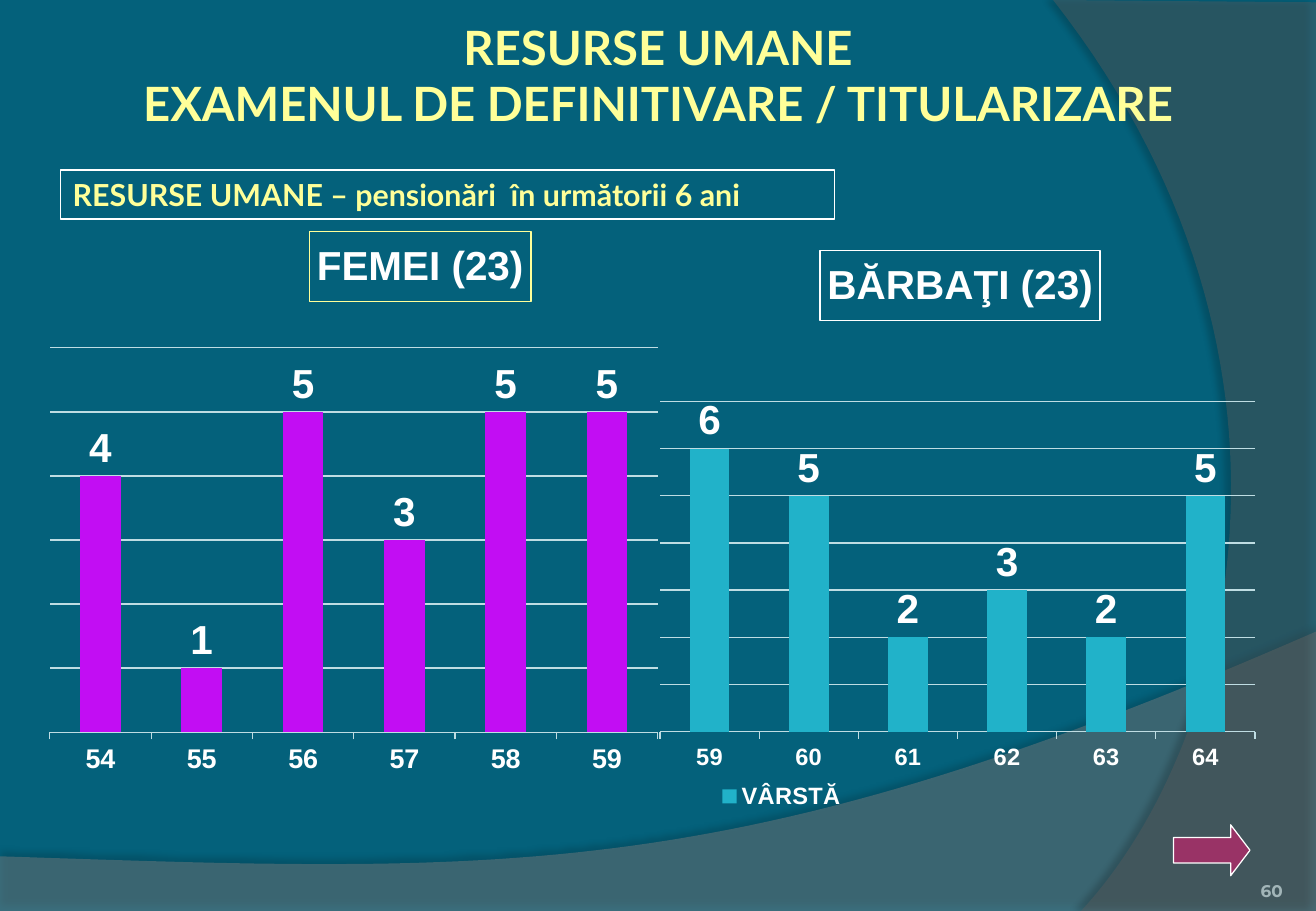
from lxml import etree
from pptx import Presentation
from pptx.chart.data import CategoryChartData
from pptx.dml.color import RGBColor
from pptx.enum.chart import XL_CHART_TYPE, XL_LABEL_POSITION, XL_LEGEND_POSITION, XL_TICK_LABEL_POSITION, XL_TICK_MARK
from pptx.enum.shapes import MSO_SHAPE
from pptx.enum.text import MSO_ANCHOR, MSO_AUTO_SIZE, PP_ALIGN
from pptx.oxml.ns import qn
from pptx.util import Pt

COLUMNS = XL_CHART_TYPE.COLUMN_CLUSTERED
ABOVE = XL_LABEL_POSITION.OUTSIDE_END
LEGEND_RIGHT = XL_LEGEND_POSITION.RIGHT
LOW, OUTSIDE, NO_TICK = XL_TICK_LABEL_POSITION.LOW, XL_TICK_MARK.OUTSIDE, XL_TICK_MARK.NONE
RECT, ARROW = MSO_SHAPE.RECTANGLE, MSO_SHAPE.RIGHT_ARROW
TOP, MIDDLE, BOTTOM = MSO_ANCHOR.TOP, MSO_ANCHOR.MIDDLE, MSO_ANCHOR.BOTTOM
LEFT, CENTER, RIGHT = PP_ALIGN.LEFT, PP_ALIGN.CENTER, PP_ALIGN.RIGHT

TEAL = RGBColor(0x04, 0x61, 0x7B)
GREY = RGBColor(0x7F, 0x7F, 0x7F)
DARK = RGBColor(0x5E, 0x5E, 0x5E)
YELLOW = RGBColor(0xFF, 0xFF, 0x99)
WHITE = RGBColor(0xFF, 0xFF, 0xFF)
PALE = RGBColor(0xA2, 0xB5, 0xB8)
PLUM = RGBColor(0x99, 0x33, 0x66)
PURPLE = RGBColor(0xC2, 0x0D, 0xF3)
CYAN = RGBColor(0x21, 0xB2, 0xC9)
GRID = RGBColor(0xBF, 0xDD, 0xE3)

TITLE = "RESURSE UMANE\vEXAMENUL DE DEFINITIVARE / TITULARIZARE"
SUBTITLE = "RESURSE UMANE – pensionări  în următorii 6 ani"
PAGE = "60"

WAVES = [
    dict(corners=[(0, 507.6), (0, 540), (780, 540)],
         curve=[(780, 374.4), (436.3, 524.9), (304.6, 517.7), (0, 507.6)],
         color=GREY, alpha=45, shadow=(35, 4, 3.5, 270)),
    dict(corners=[(780, 1.4), (780, 540)],
         curve=[(640.8, 540), (728.6, 445.7), (793.4, 216), (624.2, 0)],
         color=DARK, alpha=40, shadow=(45, 4, 4, 180)),
]
CHARTS = [
    dict(box=(18, 116, 372.2, 382.3), title="FEMEI (23)", border=YELLOW, title_at=(0.445, 0.055),
         series="FEMEI (23)", ages=range(54, 60), values=(4, 1, 5, 3, 5, 5), top=6,
         color=PURPLE, tick_size=16, plot=(0.031, 0.236, 0.969, 0.596), legend=None),
    dict(box=(379.4, 138.2, 380.9, 347.8), title="BĂRBAŢI (23)", border=WHITE, title_at=(0.28, 0.03),
         series="VÂRSTĂ", ages=range(59, 65), values=(6, 5, 2, 3, 2, 5), top=7,
         color=CYAN, tick_size=14, plot=(0.031, 0.287, 0.926, 0.563), legend=(0.11, 0.93, 0.22, 0.06)),
]


def apply(obj, values):
    for name, value in values.items():
        setattr(obj, name, value)


def style(font, size, color=WHITE, name="Arial", bold=True):
    apply(font, dict(size=Pt(size), name=name, bold=bold))
    font.color.rgb = color


def write(sp, text, size, name, color, align, anchor, inset):
    tf = sp.text_frame
    apply(tf, dict(word_wrap=True, auto_size=MSO_AUTO_SIZE.NONE, vertical_anchor=anchor,
                   margin_left=Pt(inset), margin_right=Pt(inset),
                   margin_top=Pt(inset / 2), margin_bottom=Pt(inset / 2)))
    p = tf.paragraphs[0]
    p.text = text
    p.alignment = align
    for r in p.runs:
        style(r.font, size, color, name)


def place(sp, left, top, width, height):
    apply(sp, dict(left=Pt(left), top=Pt(top), width=Pt(width), height=Pt(height)))


def bezier(a, b, c, d, steps=60):
    for i in range(steps + 1):
        t = i / steps
        u = 1 - t
        yield tuple(u**3 * k + 3 * u * u * t * m + 3 * u * t * t * n + t**3 * q
                    for k, m, n, q in zip(a, b, c, d))


def set_alpha(color, percent):
    etree.SubElement(color, qn("a:alpha"), val=str(percent * 1000))


def add_wave(s, corners, curve, color, alpha, shadow):
    points = [(Pt(x), Pt(y)) for x, y in corners + list(bezier(*curve))]
    fb = s.shapes.build_freeform(*points[0], scale=1.0)
    fb.add_line_segments(points[1:], close=True)
    sp = fb.convert_to_shape()
    sp.shadow.inherit = False
    sp.fill.solid()
    sp.fill.fore_color.rgb = color
    sp.line.fill.background()
    spPr = sp.element.spPr
    set_alpha(spPr.find(qn("a:solidFill")).find(qn("a:srgbClr")), alpha)
    opacity, blur, dist, angle = shadow
    outer = etree.SubElement(spPr.find(qn("a:effectLst")), qn("a:outerShdw"),
                             blurRad=str(Pt(blur)), dist=str(Pt(dist)),
                             dir=str(angle * 60000), rotWithShape="0")
    set_alpha(etree.SubElement(outer, qn("a:srgbClr"), val="000000"), opacity)


def set_layout(parent, index, box, inner=False):
    for old in parent.findall(qn("c:layout")):
        parent.remove(old)
    layout = etree.Element(qn("c:layout"))
    manual = etree.SubElement(layout, qn("c:manualLayout"))
    values = [("layoutTarget", "inner")] if inner else []
    values += [("xMode", "edge"), ("yMode", "edge")] + list(zip("xywh", box))
    for tag, value in values:
        etree.SubElement(manual, qn("c:" + tag), val=str(value))
    parent.insert(index, layout)


def add_column_chart(s, box, title, border, title_at, series, ages, values, top,
                     color, tick_size, plot, legend):
    data = CategoryChartData(number_format="0")
    data.categories = [str(age) for age in ages]
    data.add_series(series, values)
    chart = s.shapes.add_chart(COLUMNS, *map(Pt, box), data).chart
    style(chart.font, 10, bold=False)

    chart.has_title = True
    heading = chart.chart_title
    heading.text_frame.text = title
    style(heading.text_frame.paragraphs[0].runs[0].font, 24)
    heading.format.line.color.rgb = border
    heading.format.line.width = Pt(0.75)

    cat, val = chart.category_axis, chart.value_axis
    apply(cat, dict(major_tick_mark=OUTSIDE, minor_tick_mark=NO_TICK,
                    tick_label_position=LOW, has_major_gridlines=False))
    style(cat.tick_labels.font, tick_size)
    apply(val, dict(minimum_scale=0, maximum_scale=top, major_unit=1,
                    has_major_gridlines=True, visible=False))
    for line in (cat.format.line, val.major_gridlines.format.line):
        line.color.rgb = GRID
        line.width = Pt(0.75)

    bars = chart.plots[0]
    apply(bars, dict(gap_width=150, vary_by_categories=False, has_data_labels=True))
    labels = bars.data_labels
    apply(labels, dict(show_value=True, position=ABOVE, number_format="0",
                       number_format_is_linked=False))
    style(labels.font, 24)
    fill = bars.series[0].format.fill
    fill.solid()
    fill.fore_color.rgb = color

    area = chart.element.find(qn("c:chart"))
    set_layout(area.find(qn("c:title")), 1, title_at)
    set_layout(area.find(qn("c:plotArea")), 0, plot, inner=True)
    chart.has_legend = legend is not None
    if legend:
        apply(chart.legend, dict(position=LEGEND_RIGHT, include_in_layout=False))
        style(chart.legend.font, 14)
        set_layout(area.find(qn("c:legend")), 1, legend)


def main():
    prs = Presentation()
    apply(prs, dict(slide_width=Pt(780), slide_height=Pt(540)))
    s = prs.slides.add_slide(prs.slide_layouts[5])
    s.background.fill.solid()
    s.background.fill.fore_color.rgb = TEAL
    for wave in WAVES:
        add_wave(s, **wave)

    title = s.shapes.title
    title.element.getparent().append(title.element)
    place(title, 0, 18, 780, 52.6)
    write(title, TITLE, 28, "Lato", YELLOW, CENTER, MIDDLE, 3.6)

    number = s.shapes.add_textbox(Pt(695.5), Pt(505.4), Pt(64.8), Pt(28.8))
    write(number, PAGE, 10, "Montserrat", PALE, RIGHT, BOTTOM, 0)

    arrow = s.shapes.add_shape(ARROW, Pt(695.5), Pt(488.9), Pt(45.4), Pt(30.2))
    arrow.adjustments[0], arrow.adjustments[1] = 0.5, 0.38
    arrow.fill.solid()
    arrow.fill.fore_color.rgb = PLUM
    banner = s.shapes.add_shape(RECT, Pt(36), Pt(100.8), Pt(458.6), Pt(29))
    banner.fill.background()
    for sp in (arrow, banner):
        sp.shadow.inherit = False
        sp.line.color.rgb = WHITE
        sp.line.width = Pt(0.75)
    write(banner, SUBTITLE, 18, "Lato", YELLOW, LEFT, TOP, 7.2)

    for chart in CHARTS:
        add_column_chart(s, **chart)
    prs.save("out.pptx")


if __name__ == "__main__":
    main()
